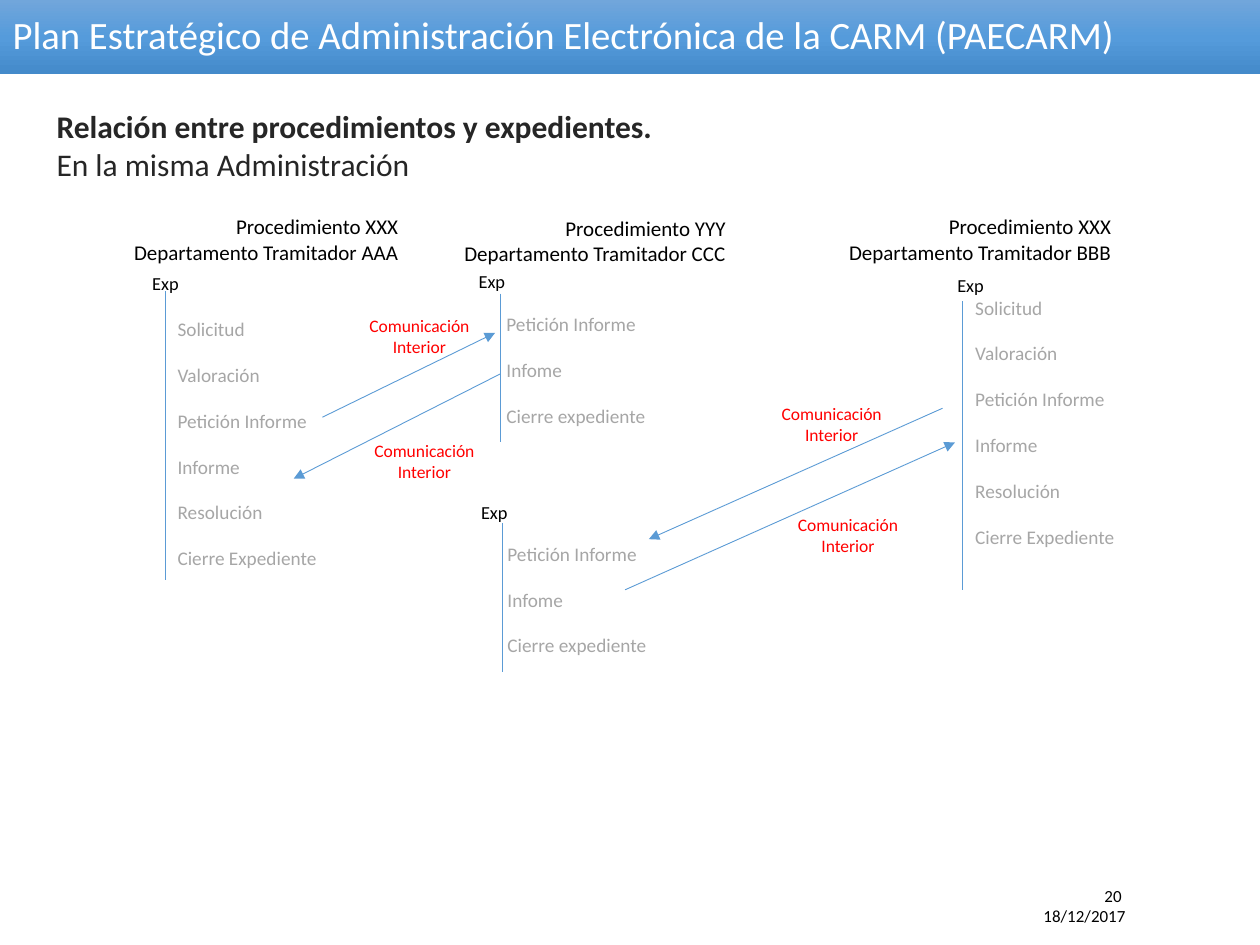
import copy
from dataclasses import dataclass

import pptx
import pptx.dml.color
import pptx.enum.shapes
import pptx.enum.text
import pptx.oxml.ns
import pptx.oxml.xmlchemy
import pptx.slide
import pptx.util

Cm = pptx.util.Cm
Pt = pptx.util.Pt
RGBColor = pptx.dml.color.RGBColor
Align = pptx.enum.text.PP_ALIGN
qn = pptx.oxml.ns.qn
OxmlElement = pptx.oxml.xmlchemy.OxmlElement

FONT = "Calibri"
WHITE = RGBColor(0xFF, 0xFF, 0xFF)
BLACK = RGBColor(0x00, 0x00, 0x00)
DARK = RGBColor(0x26, 0x26, 0x26)
GREY = RGBColor(0xA6, 0xA6, 0xA6)
RED = RGBColor(0xFF, 0x00, 0x00)
BLUE = RGBColor(0x5B, 0x9B, 0xD5)
BANNER_STOPS = (
    (0.0, RGBColor(0x71, 0xA6, 0xDB)),
    (0.5, RGBColor(0x55, 0x9B, 0xDB)),
    (1.0, RGBColor(0x44, 0x8A, 0xCA)),
)

Point = tuple[float, float]


@dataclass(frozen=True)
class TextStyle:
    size: float
    color: RGBColor
    align: Align = Align.LEFT
    gap: float = 0
    wrap: bool = False
    bold_first: bool = False


@dataclass(frozen=True)
class Procedure:
    name: str
    department: str
    left: float
    top: float
    width: float


@dataclass(frozen=True)
class CaseFile:
    """One vertical timeline; positions in centimetres."""
    label_at: Point
    steps_at: Point
    line_x: float
    line_top: float
    line_length: float
    steps: tuple[str, ...]


@dataclass(frozen=True)
class Message:
    label_at: Point
    start: Point
    end: Point


HEADING = TextStyle(18, DARK, bold_first=True)
PROCEDURE = TextStyle(12, BLACK, Align.RIGHT, wrap=True)
STEP = TextStyle(11, GREY, gap=13)
EXP = TextStyle(10.5, BLACK)
MESSAGE = TextStyle(10, RED, Align.CENTER)
FOOTER = TextStyle(9.7, BLACK, Align.RIGHT, wrap=True)

FULL_STEPS = ("Solicitud", "Valoración", "Petición Informe", "Informe",
              "Resolución", "Cierre Expediente")
REPORT_STEPS = ("Petición Informe", "Infome", "Cierre expediente")

PROCEDURES = (
    Procedure("Procedimiento XXX", "Departamento Tramitador AAA", 2.29, 4.19, 5.99),
    Procedure("Procedimiento YYY", "Departamento Tramitador CCC", 9.04, 4.22, 5.84),
    Procedure("Procedimiento XXX", "Departamento Tramitador BBB", 16.81, 4.19, 5.84),
)
CASE_FILES = (
    CaseFile((2.82, 5.36), (3.33, 6.27), 3.33, 5.87, 5.82, FULL_STEPS),
    CaseFile((9.4, 5.33), (9.96, 6.17), 10.08, 5.92, 3, REPORT_STEPS),
    CaseFile((19.05, 5.41), (19.41, 5.84), 19.41, 6.07, 5.82, FULL_STEPS),
    CaseFile((9.45, 9.98), (9.98, 10.8), 10.13, 10.54, 3, REPORT_STEPS),
)
MESSAGES = (
    Message((7.16, 6.22), (6.5, 8.41), (9.98, 6.71)),
    Message((7.26, 8.74), (10.08, 7.54), (5.92, 9.65)),
    Message((15.47, 8), (19, 8.23), (13.08, 10.87)),
    Message((15.8, 10.24), (12.6, 11.89), (19.25, 8.92)),
)


def write_paragraphs(frame, lines: tuple[str, ...], style: TextStyle) -> None:
    for index, line in enumerate(lines):
        paragraph = frame.paragraphs[0] if index == 0 else frame.add_paragraph()
        paragraph.alignment = style.align
        if index and style.gap:
            paragraph.space_before = Pt(style.gap)
        run = paragraph.add_run()
        run.text = line
        run.font.name = FONT
        run.font.size = Pt(style.size)
        run.font.bold = style.bold_first and index == 0
        run.font.color.rgb = style.color


def add_text(slide: pptx.slide.Slide, at: Point, size: Point,
             lines: tuple[str, ...], style: TextStyle) -> None:
    box = slide.shapes.add_textbox(*map(Cm, at + size))
    box.text_frame.word_wrap = style.wrap
    write_paragraphs(box.text_frame, lines, style)


def add_line(slide: pptx.slide.Slide, start: Point, end: Point,
             arrow: bool = False) -> None:
    line = slide.shapes.add_connector(
        pptx.enum.shapes.MSO_CONNECTOR.STRAIGHT, *map(Cm, start + end))
    line.line.color.rgb = BLUE
    line.line.width = Pt(0.5)
    if arrow:
        tail = OxmlElement("a:tailEnd")
        tail.set("type", "triangle")
        line.line._get_or_add_ln().append(tail)
    line._element.spPr.append(OxmlElement("a:effectLst"))


def fill_banner(banner) -> None:
    """Give the banner a vertical gradient of three colours."""
    banner.fill.gradient()
    banner.fill.gradient_angle = 270
    stop_list = banner._element.spPr.find(".//" + qn("a:gsLst"))
    stop_list.append(copy.deepcopy(stop_list[0]))
    for stop, (position, color) in zip(banner.fill.gradient_stops, BANNER_STOPS):
        stop.position = position
        stop.color.rgb = color


def add_title(slide: pptx.slide.Slide) -> None:
    title = slide.shapes.title
    title.left, title.top, title.width, title.height = map(Cm, (0, 0, 25.4, 1.5))
    fill_banner(title)
    frame = title.text_frame
    frame.auto_size = pptx.enum.text.MSO_AUTO_SIZE.NONE
    frame.vertical_anchor = pptx.enum.text.MSO_ANCHOR.MIDDLE
    write_paragraphs(
        frame, ("Plan Estratégico de Administración Electrónica de la CARM (PAECARM)",),
        TextStyle(22.1, WHITE))
    frame.paragraphs[0].line_spacing = 0.9


def add_case_file(slide: pptx.slide.Slide, case: CaseFile) -> None:
    add_line(slide, (case.line_x, case.line_top),
             (case.line_x, case.line_top + case.line_length))
    steps_height = 0.93 * len(case.steps)
    add_text(slide, case.steps_at, (3.35, steps_height), case.steps, STEP)
    add_text(slide, case.label_at, (1.1, 0.7), ("Exp",), EXP)


def main() -> None:
    presentation = pptx.Presentation()
    presentation.slide_width = Cm(25.4)
    presentation.slide_height = Cm(19.05)
    slide = presentation.slides.add_slide(presentation.slide_layouts[5])

    add_title(slide)
    add_text(slide, (0.89, 2.03), (12.75, 1.8),
             ("Relación entre procedimientos y expedientes.",
              "En la misma Administración"), HEADING)
    for procedure in PROCEDURES:
        add_text(slide, (procedure.left, procedure.top), (procedure.width, 1.27),
                 (procedure.name, procedure.department), PROCEDURE)
    for case in CASE_FILES:
        add_case_file(slide, case)
    for message in MESSAGES:
        add_line(slide, message.start, message.end, arrow=True)
        add_text(slide, message.label_at, (2.59, 1.12),
                 ("Comunicación", "Interior"), MESSAGE)
    add_text(slide, (18.11, 17.73), (4.83, 1.09), ("20 ", "18/12/2017"), FOOTER)

    presentation.save("out.pptx")


if __name__ == "__main__":
    main()
